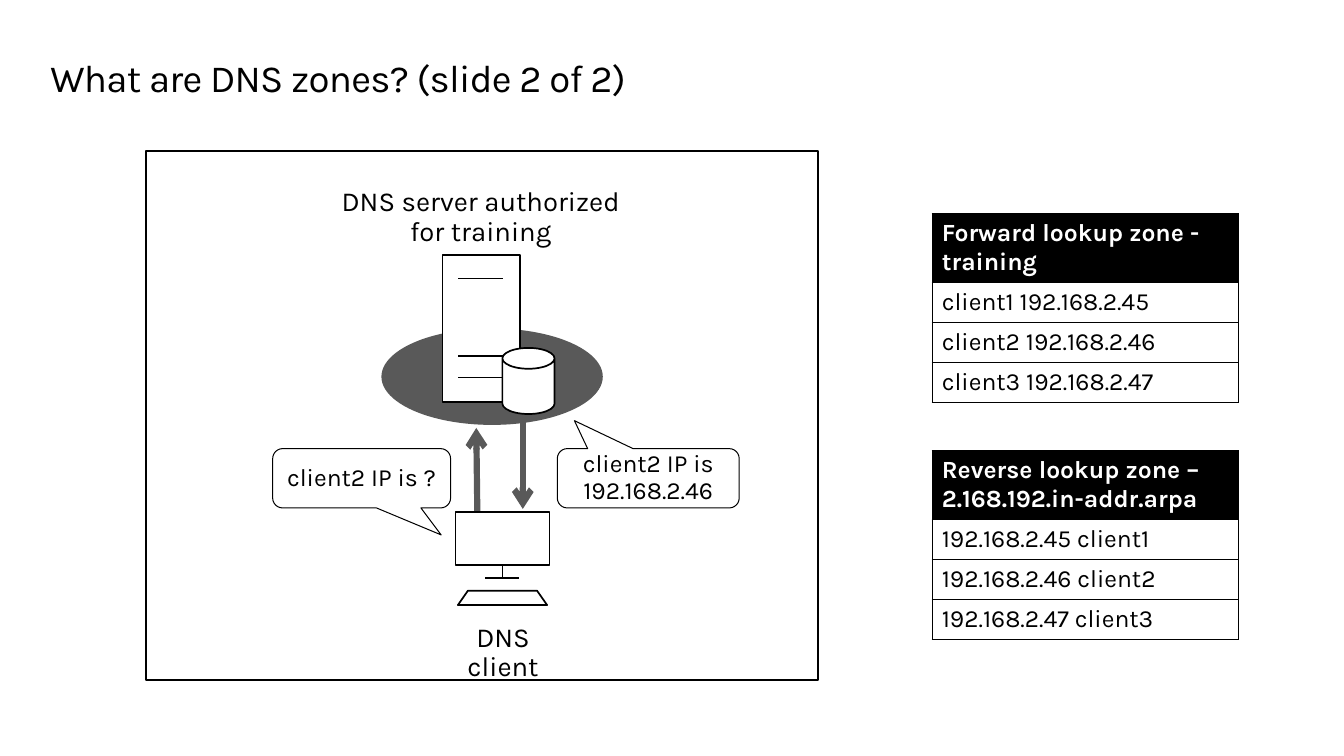
"""Build the slide on DNS zones: a lookup diagram beside two zone tables."""
import lxml.etree
import pptx
import pptx.dml.color
import pptx.enum.shapes
import pptx.enum.text
import pptx.oxml.ns
import pptx.util

Pt = pptx.util.Pt
qn = pptx.oxml.ns.qn
SHAPE = pptx.enum.shapes.MSO_SHAPE
ALIGN = pptx.enum.text.PP_ALIGN
ANCHOR = pptx.enum.text.MSO_ANCHOR
BLACK = pptx.dml.color.RGBColor(0, 0, 0)
WHITE = pptx.dml.color.RGBColor(255, 255, 255)
GRAY = pptx.dml.color.RGBColor(0x59, 0x59, 0x59)


def write(frame, text, size=18, color=BLACK, bold=False, align=ALIGN.LEFT,
          line_spacing=None, space_after=0, tracking=None):
    frame.word_wrap = True
    paragraph = frame.paragraphs[0]
    paragraph.alignment = align
    paragraph.space_after = Pt(space_after)
    if line_spacing:
        paragraph.line_spacing = line_spacing
    run = paragraph.add_run()
    run.text = text
    run.font.name = "Karla"
    run.font.size = Pt(size)
    run.font.bold = bold
    run.font.color.rgb = color
    if tracking:
        run.font._element.set("spc", str(int(tracking * 100)))


class ZoneSlide:
    label_style = dict(align=ALIGN.CENTER, line_spacing=0.9, space_after=6)
    header_height = 50.4
    row_height = 29.1

    def __init__(self, slide):
        self.slide = slide

    def text(self, text, left, top, width, height, margins, **style):
        frame = self.slide.shapes.add_textbox(Pt(left), Pt(top), Pt(width), Pt(height)).text_frame
        self.inset(frame, *margins)
        write(frame, text, **style)

    def inset(self, frame, left, top, right, bottom):
        frame.margin_left, frame.margin_top = Pt(left), Pt(top)
        frame.margin_right, frame.margin_bottom = Pt(right), Pt(bottom)

    def shape(self, kind, left, top, width, height, fill=WHITE, line=1.25, adjust=()):
        shape = self.slide.shapes.add_shape(kind, Pt(left), Pt(top), Pt(width), Pt(height))
        shape.shadow.inherit = False
        if fill is None:
            shape.fill.background()
        else:
            shape.fill.solid()
            shape.fill.fore_color.rgb = fill
        if line:
            shape.line.color.rgb = BLACK
            shape.line.width = Pt(line)
        else:
            shape.line.fill.background()
        for index, value in enumerate(adjust):
            shape.adjustments[index] = value
        return shape

    def callout(self, text, left, width, adjust):
        bubble = self.shape(SHAPE.ROUNDED_RECTANGULAR_CALLOUT, left, 326.9, width, 43.2,
                            line=0.75, adjust=adjust)
        self.inset(bubble.text_frame, 0, 0, 0, 0)
        bubble.text_frame.vertical_anchor = ANCHOR.MIDDLE
        write(bubble.text_frame, text, **self.label_style)

    def line(self, x1, y1, x2, y2, color=BLACK, width=1.25, arrow=False):
        line = self.slide.shapes.add_connector(
            pptx.enum.shapes.MSO_CONNECTOR.STRAIGHT, Pt(x1), Pt(y1), Pt(x2), Pt(y2))
        line.line.color.rgb = color
        line.line.width = Pt(width)
        if arrow:
            lxml.etree.SubElement(line.line._get_or_add_ln(), qn("a:tailEnd"), type="arrow")
        lxml.etree.SubElement(line._element.spPr, qn("a:effectLst"))

    def table(self, top, header, records):
        height = self.header_height + self.row_height * len(records)
        table = self.slide.shapes.add_table(
            len(records) + 1, 1, Pt(679), Pt(top), Pt(223.2), Pt(height)).table
        for index, text in enumerate([header, *records]):
            is_header = index == 0
            table.rows[index].height = Pt(self.header_height if is_header else self.row_height)
            cell = table.cell(index, 0)
            self.border(cell)
            cell.fill.solid()
            cell.fill.fore_color.rgb = BLACK if is_header else WHITE
            write(cell.text_frame, text, color=WHITE if is_header else BLACK, bold=is_header)

    def border(self, cell):
        properties = cell._tc.get_or_add_tcPr()
        for side in ("a:lnL", "a:lnR", "a:lnT", "a:lnB"):
            edge = lxml.etree.SubElement(properties, qn(side), w=str(Pt(0.75)))
            fill = lxml.etree.SubElement(edge, qn("a:solidFill"))
            lxml.etree.SubElement(fill, qn("a:srgbClr"), val=str(BLACK))


def main():
    deck = pptx.Presentation()
    deck.slide_width, deck.slide_height = Pt(979.2), Pt(550.8)
    zones = ZoneSlide(deck.slides.add_slide(deck.slide_layouts[6]))

    zones.text("What are DNS zones? (slide 2 of 2)", 36.7, 43.2, 908.6, 32.4,
               (0, 0, 7.2, 0), size=28, line_spacing=0.9, tracking=-0.5)

    zones.line(347.8, 375.1, 347, 311.8, GRAY, 4.5, arrow=True)
    zones.line(380.9, 303.1, 380.9, 370.8, GRAY, 4.5, arrow=True)
    zones.shape(SHAPE.RECTANGLE, 106.6, 110.2, 489.6, 385.2, fill=None, line=1.5)
    zones.shape(SHAPE.OVAL, 277.9, 239.3, 161.3, 70.3, fill=GRAY, line=None)

    zones.shape(SHAPE.RECTANGLE, 331.9, 373, 68.6, 38.9)
    zones.line(366.2, 412.2, 366.2, 421.2)
    zones.line(353.5, 421.2, 378.4, 421.2)
    zones.shape(SHAPE.TRAPEZOID, 333.6, 430.4, 65, 10.4, adjust=[0.7])

    zones.callout("client2 IP is 192.168.2.46", 406.1, 132.5, (-0.406, -0.972, 0.167))
    zones.callout("client2 IP is ?", 198.7, 129.6, (0.447, 0.955, 0.167))

    zones.shape(SHAPE.RECTANGLE, 322.4, 185.8, 56.5, 107.3)
    for slot in (203, 259.2, 275):
        zones.line(334, slot, 366.5, slot)
    zones.shape(SHAPE.CAN, 366, 253.5, 38, 48.2, adjust=[0.4])

    label_margins = (14.4, 11.5, 14.4, 11.5)
    zones.text("DNS server authorized for training", 226.8, 125.3, 247, 67,
               label_margins, size=20, **zones.label_style)
    zones.text("DNS client", 306.5, 442.8, 120, 45.4,
               label_margins, size=20, **zones.label_style)

    zones.table(155.5, "Forward lookup zone - training",
                ["client1 192.168.2.45", "client2 192.168.2.46", "client3 192.168.2.47"])
    zones.table(328.3, "Reverse lookup zone –2.168.192.in-addr.arpa",
                ["192.168.2.45 client1", "192.168.2.46 client2", "192.168.2.47 client3"])

    deck.save("out.pptx")


if __name__ == "__main__":
    main()
